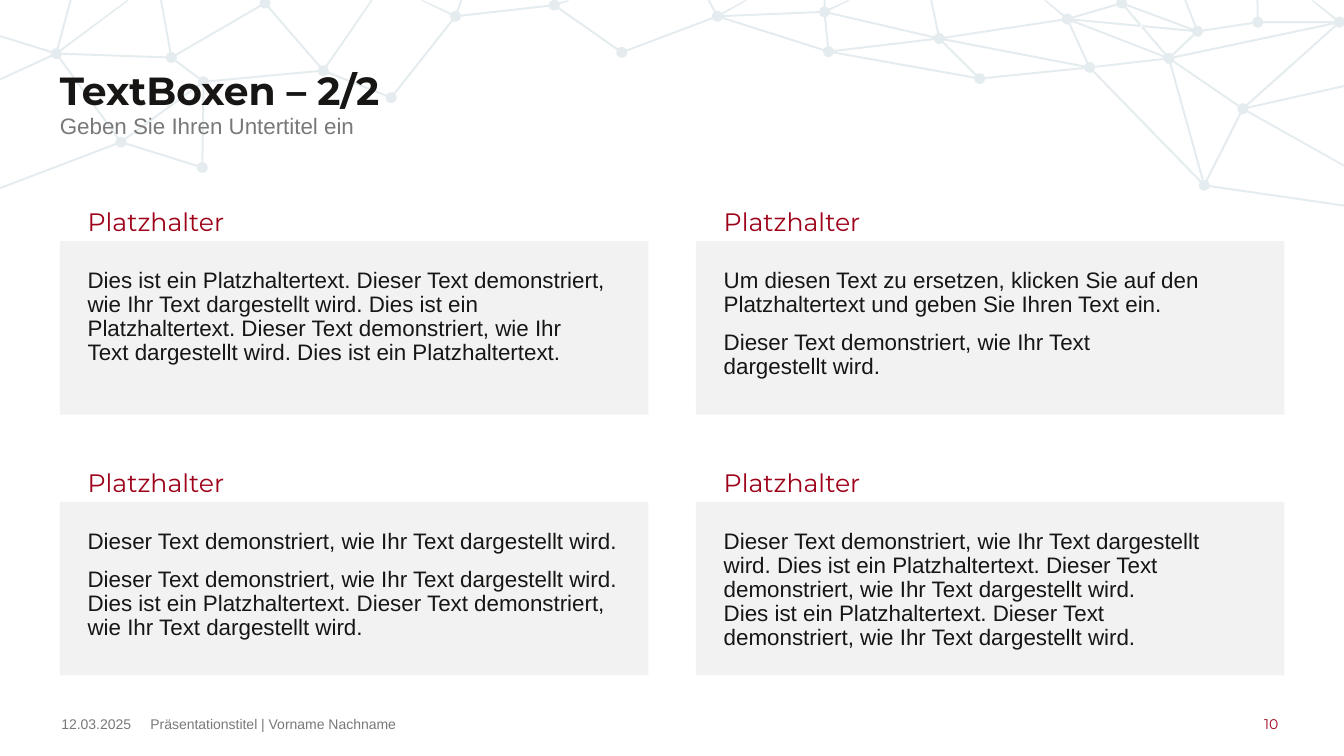
from copy import deepcopy
from math import cos, hypot, pi, sin

from lxml import etree
from pptx import Presentation
from pptx.dml.color import RGBColor
from pptx.enum import shapes, text
from pptx.oxml.ns import qn
from pptx.util import Cm, Pt

TITLE = "TextBoxen – 2/2"
SUBTITLE = "Geben Sie Ihren Untertitel ein"
HEADING = "Platzhalter"
BOXES = [
    ["Dies ist ein Platzhaltertext. Dieser Text demonstriert, wie Ihr Text dargestellt wird. "
     "Dies ist ein Platzhaltertext. Dieser Text demonstriert, wie Ihr \n"
     "Text dargestellt wird. Dies ist ein Platzhaltertext."],
    ["Um diesen Text zu ersetzen, klicken Sie auf den Platzhaltertext und geben Sie Ihren Text ein.",
     "Dieser Text demonstriert, wie Ihr Text \ndargestellt wird."],
    ["Dieser Text demonstriert, wie Ihr Text dargestellt wird.",
     "Dieser Text demonstriert, wie Ihr Text dargestellt wird. Dies ist ein Platzhaltertext. "
     "Dieser Text demonstriert, wie Ihr Text dargestellt wird."],
    ["Dieser Text demonstriert, wie Ihr Text dargestellt \n"
     "wird. Dies ist ein Platzhaltertext. Dieser Text demonstriert, wie Ihr Text dargestellt wird. \n"
     "Dies ist ein Platzhaltertext. Dieser Text \ndemonstriert, wie Ihr Text dargestellt wird."],
]
DATE = "12.03.2025"
FOOTER = "Präsentationstitel | Vorname Nachname"
PAGE = "10"

COLORS = {"ink": "171615", "red": "9D0018", "grey": "797979", "panel": "F2F2F2", "web": "054B67"}

# Background web, in cm: nodes, links between nodes, links to the slide edge
NODES = {
    "a": (1.42, 1.35), "b": (4.32, 1.45), "c": (5.13, 2.06), "d": (3.05, 3.58), "e": (5.1, 4.22),
    "f": (8.15, 1.78), "g": (9.86, 2.46), "h": (6.68, 0.08), "i": (11.48, 0.41), "j": (13.97, 0.13),
    "k": (15.67, 1.32), "l": (18.08, 0.41), "m": (20.78, 0.3), "n": (20.88, 1.3), "o": (23.67, 0.97),
    "p": (24.69, 1.98), "q": (26.9, 0.48), "r": (27.46, 1.7), "s": (28.27, 0.08), "t": (30.18, 0.79),
    "u": (29.46, 1.47), "v": (31.7, 0.56), "w": (33.76, 0.56), "x": (31.32, 2.74), "y": (30.35, 4.67),
}
LINKS = ("ab ad ac bc cd de ce bh hf cf fg gi ij jk kl lm ln mn mo no oq op or np pr qr qu qt qs "
         "st su ru ut uw tv vw ux uy ry xy xw").replace(" ac", "").split()
EDGE_LINKS = {
    "a": [(1.78, 0), (3.22, 0), (0, 0.91), (0, 2)], "b": [(4.06, 0)], "d": [(0, 4.74)],
    "f": [(9.37, 0)], "i": [(10.64, 0), (11.63, 0)], "j": [(14.33, 0)],
    "l": [(17.86, 0), (18.8, 0)], "m": [(20.78, 0), (21.39, 0)], "o": [(23.47, 0)],
    "q": [(26.34, 0)], "t": [(29.87, 0)], "v": [(31.69, 0)], "w": [(33.07, 0)],
    "x": [(33.87, 2.17), (33.87, 4.17)], "y": [(33.87, 5.18)],
}
RADIUS, HALF_LINE, OPACITY = 0.14, 0.025, 10

SLIDE_W, SLIDE_H = 33.87, 19.05
LEFT, WIDTH = 1.51, 30.86
BOX_W, BOX_H, HEAD_H = 14.83, 4.37, 1.0
COL_STEP, ROW_STEP, GRID_TOP = 16.03, 6.57, 5.08
FOOT_TOP, FOOT_H = 17.93, 0.61


def rgb(name):
    return RGBColor.from_string(COLORS[name])


def write(sp, lines, size, font, color, insets=(0, 0, 0, 0), anchor=text.MSO_ANCHOR.TOP,
          align=text.PP_ALIGN.LEFT, spacing=None, after=0, bold=False):
    tf = sp.text_frame
    tf.word_wrap = True
    tf.auto_size = text.MSO_AUTO_SIZE.NONE
    tf.vertical_anchor = anchor
    tf.margin_left, tf.margin_top, tf.margin_right, tf.margin_bottom = map(Cm, insets)
    for n, line in enumerate(lines):
        p = tf.add_paragraph() if n else tf.paragraphs[0]
        p.text = line
        p.alignment = align
        p.line_spacing = spacing
        p.space_before, p.space_after = Pt(0), Pt(after)
        for r in p.runs:
            r.font.size, r.font.name, r.font.bold = Pt(size), font, bold
            r.font.color.rgb = rgb(color)
        for br in p._p.br_lst:  # line breaks take the size of the text around them
            br.append(deepcopy(p.runs[0]._r.rPr))


def text_box(slide, x, y, w, h, line, size, font, color, **options):
    sp = slide.shapes.add_textbox(Cm(x), Cm(y), Cm(w), Cm(h))
    write(sp, [line], size, font, color, **options)


def on_slide(x, y):
    return Cm(min(max(x, 0), SLIDE_W)), Cm(max(y, 0))


def dot_outline(x, y):
    angles = [k * pi / 5 for k in range(10)]
    return [on_slide(x + RADIUS * cos(a), y + RADIUS * sin(a)) for a in angles]


def link_outline(start, end, end_gap):
    """Thin bar from the rim of one dot to another dot or to the slide edge."""
    (x1, y1), (x2, y2) = start, end
    length = hypot(x2 - x1, y2 - y1)
    dx, dy = (x2 - x1) / length, (y2 - y1) / length
    x1, y1 = x1 + dx * RADIUS, y1 + dy * RADIUS
    x2, y2 = x2 - dx * end_gap, y2 - dy * end_gap
    nx, ny = -dy * HALF_LINE, dx * HALF_LINE
    return [on_slide(x1 + nx, y1 + ny), on_slide(x2 + nx, y2 + ny),
            on_slide(x2 - nx, y2 - ny), on_slide(x1 - nx, y1 - ny)]


def draw_web(slide):
    outlines = [dot_outline(x, y) for x, y in NODES.values()]
    outlines += [link_outline(NODES[a], NODES[b], RADIUS) for a, b in LINKS]
    outlines += [link_outline(NODES[a], end, 0) for a, ends in EDGE_LINKS.items() for end in ends]
    web = slide.shapes.build_freeform(*outlines[0][0])
    for n, (first, *rest) in enumerate(outlines):
        if n:
            web.move_to(*first)
        web.add_line_segments(rest, close=True)
    sp = web.convert_to_shape()
    sp.shadow.inherit = False
    sp.fill.solid()
    sp.fill.fore_color.rgb = rgb("web")
    color = sp._element.spPr.find(qn("a:solidFill"))[0]
    etree.SubElement(color, qn("a:alpha")).set("val", str(OPACITY * 1000))
    sp.line.fill.background()


def draw_box(slide, x, y, lines):
    text_box(slide, x, y, BOX_W, HEAD_H, HEADING, 18, "Montserrat", "red",
             insets=(0.7, 0, 0.4, 0), anchor=text.MSO_ANCHOR.MIDDLE, after=10)
    sp = slide.shapes.add_shape(shapes.MSO_SHAPE.RECTANGLE, Cm(x), Cm(y + HEAD_H),
                                Cm(BOX_W), Cm(BOX_H))
    sp.shadow.inherit = False
    sp.fill.solid()
    sp.fill.fore_color.rgb = rgb("panel")
    sp.line.fill.background()
    write(sp, lines, 16, "Arial", "ink", insets=(0.7,) * 4, spacing=0.9, after=10)


def main():
    prs = Presentation()
    prs.slide_width, prs.slide_height = Cm(SLIDE_W), Cm(SLIDE_H)
    slide = prs.slides.add_slide(prs.slide_layouts[5])
    draw_web(slide)

    for n, lines in enumerate(BOXES):
        row, col = divmod(n, 2)
        draw_box(slide, LEFT + col * COL_STEP, GRID_TOP + row * ROW_STEP, lines)

    title = slide.shapes.title
    title.left, title.top, title.width, title.height = Cm(LEFT), Cm(1.8), Cm(WIDTH), Cm(1.8)
    write(title, [TITLE], 28, "Montserrat", "ink", spacing=0.9, bold=True)
    slide.shapes._spTree.append(title._element)  # in front of the web
    text_box(slide, LEFT, 2.9, WIDTH, 0.7, SUBTITLE, 16, "Arial", "grey", spacing=0.9, after=10)

    middle = text.MSO_ANCHOR.MIDDLE
    text_box(slide, LEFT, FOOT_TOP, 1.83, FOOT_H, DATE, 10, "Arial", "grey",
             anchor=middle, align=text.PP_ALIGN.CENTER)
    text_box(slide, 3.79, FOOT_TOP, 12.62, FOOT_H, FOOTER, 10, "Arial", "grey", anchor=middle)
    text_box(slide, 31.86, FOOT_TOP, 0.51, FOOT_H, PAGE, 10, "Montserrat", "red", anchor=middle)
    prs.save("out.pptx")


if __name__ == "__main__":
    main()
